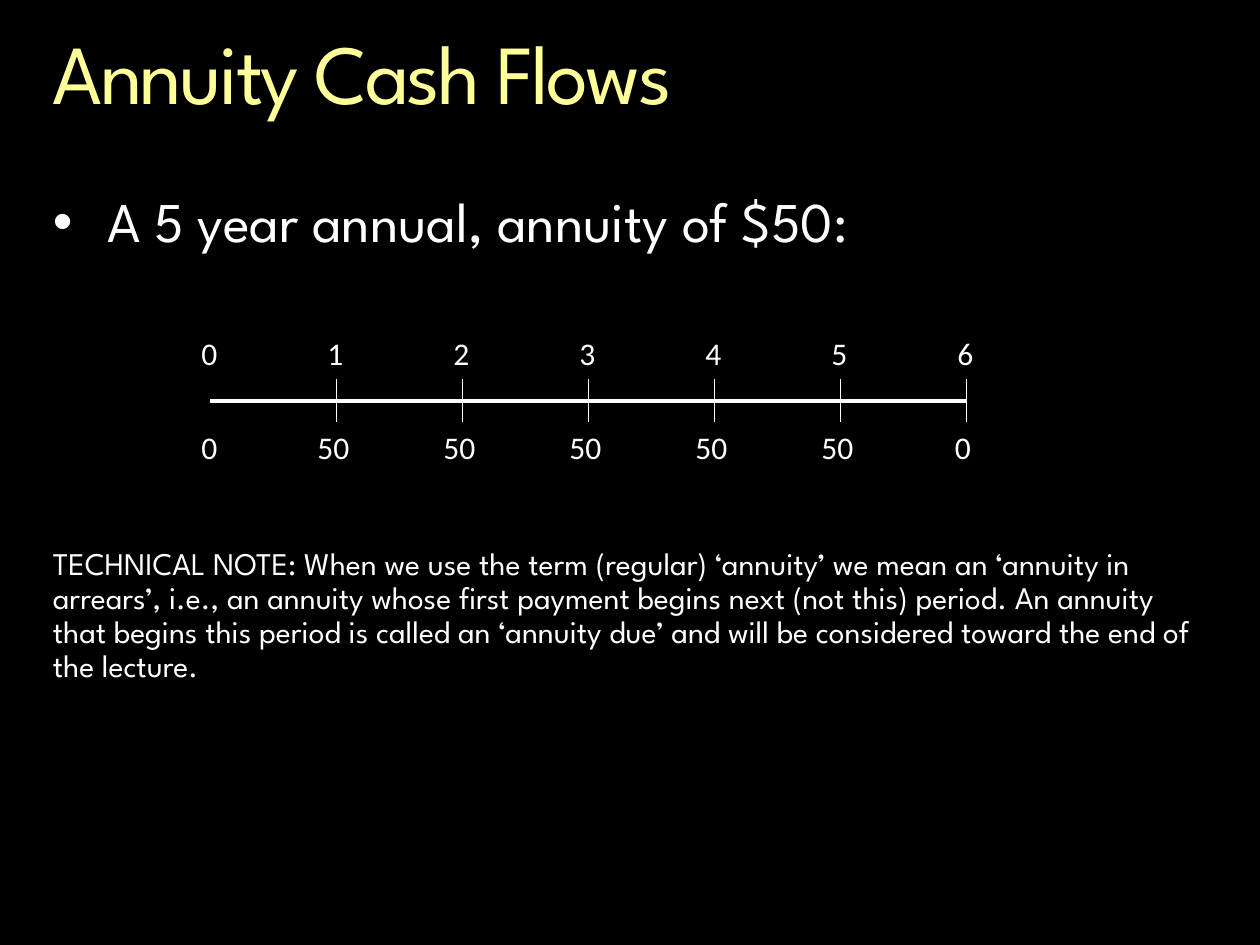
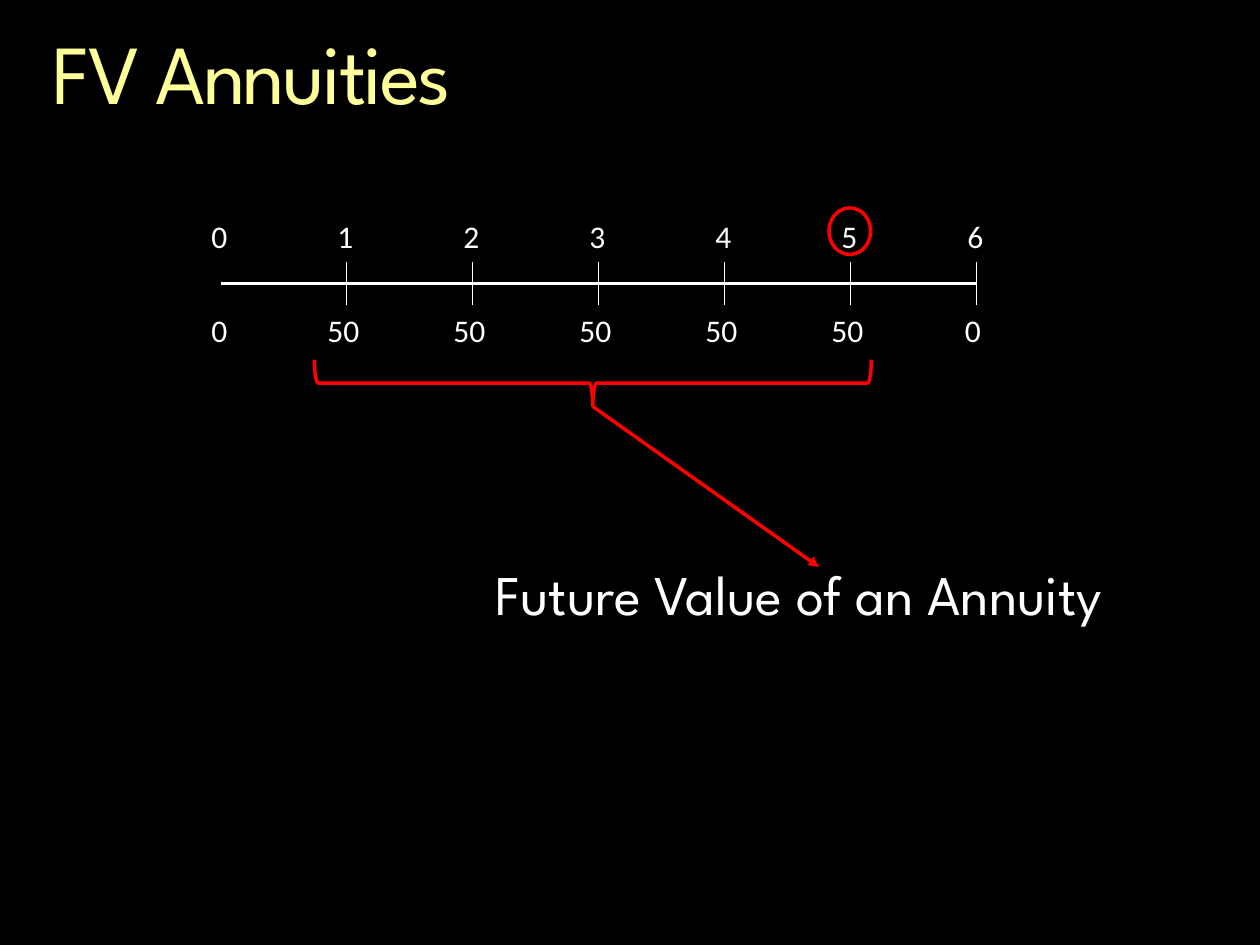
from dataclasses import dataclass
from lxml.etree import SubElement
from pptx import Presentation
from pptx.dml.color import RGBColor as RGB
from pptx.enum.shapes import MSO_CONNECTOR as CONN, MSO_SHAPE as SHAPE
from pptx.enum.text import MSO_AUTO_SIZE as FIT
from pptx.oxml.ns import qn
from pptx.util import Inches, Pt


@dataclass(frozen=True)
class Theme:
    back: RGB = RGB(0x00, 0x00, 0x00)
    title: RGB = RGB(0xFF, 0xFF, 0x99)
    text: RGB = RGB(0xFF, 0xFF, 0xFF)
    mark: RGB = RGB(0xFF, 0x00, 0x00)
    head_font: str = "League Spartan"
    num_font: str = "Calibri"
    title_pt: int = 48
    body_pt: int = 32
    small_pt: int = 18
    axis_pt: float = 2.25
    tick_pt: float = 1
    mark_pt: float = 2


T = Theme()
TITLES = ["Annuity Cash Flows", "FV Annuities"]
BULLET = "A 5 year annual, annuity of $50:"
NOTE = (
    "TECHNICAL NOTE: When we use the term (regular) ‘annuity’ we mean an "
    "‘annuity in arrears’, i.e., an annuity whose first payment begins next "
    "(not this) period. An annuity that begins this period is called an "
    "‘annuity due’ and will be considered toward the end of the lecture."
)
RESULT = "Future Value of an Annuity"
CASH_FLOWS = [("0", 0.17)] + [("50", 0.25)] * 5 + [("0", 0.19)]
LAST = len(CASH_FLOWS) - 1
MARGIN, WIDTH = 0.42, 9.17
TICK = 0.17


def add_run(p, text, size, font=T.head_font, color=T.text):
    r = p.add_run()
    r.text = text
    r.font.size = Pt(size)
    r.font.name = font
    r.font.color.rgb = color
    return r


def add_box(shapes, x, y, w, h, inset=True):
    tf = shapes.add_textbox(Inches(x), Inches(y), Inches(w), Inches(h)).text_frame
    tf.word_wrap = True
    tf.auto_size = FIT.SHAPE_TO_FIT_TEXT
    if not inset:
        tf.margin_left = tf.margin_right = tf.margin_top = tf.margin_bottom = 0
        tf.paragraphs[0].line_spacing = 0.9
    return tf


def add_line(shapes, x1, y1, x2, y2, color, width):
    c = shapes.add_connector(
        CONN.STRAIGHT, Inches(x1), Inches(y1), Inches(x2), Inches(y2))
    c.line.color.rgb = color
    c.line.width = Pt(width)
    SubElement(c._element.spPr, qn("a:effectLst"))
    return c


def add_outline(shapes, kind, x, y, w, h):
    sp = shapes.add_shape(kind, Inches(x), Inches(y), Inches(w), Inches(h))
    sp.shadow.inherit = False
    sp.fill.background()
    sp.line.color.rgb = T.mark
    sp.line.width = Pt(T.mark_pt)
    return sp


def add_slide(prs, title):
    s = prs.slides.add_slide(prs.slide_layouts[6])
    s.background.fill.solid()
    s.background.fill.fore_color.rgb = T.back
    tf = add_box(s.shapes, MARGIN, 0.25, WIDTH, 0.73, inset=False)
    r = add_run(tf.paragraphs[0], title, T.title_pt, color=T.title)
    r.font._element.set("spc", "-150")
    return s


def add_timeline(s, left, y):
    shapes = s.shapes.add_group_shape().shapes
    add_line(shapes, left, y, left + LAST, y, T.text, T.axis_pt)
    for period, (flow, shift) in enumerate(CASH_FLOWS):
        x = left + period
        if period:
            add_line(shapes, x, y - TICK, x, y + TICK, T.text, T.tick_pt)
        tf = add_box(shapes, x - 0.17, y - 0.58, 0.33, 0.4)
        add_run(tf.paragraphs[0], str(period), T.small_pt, T.num_font)
        tf = add_box(shapes, x - shift, y + TICK, 0.58, 0.4)
        add_run(tf.paragraphs[0], flow, T.small_pt, T.num_font)


def build_cash_flows(prs):
    s = add_slide(prs, TITLES[0])
    tf = add_box(s.shapes, MARGIN, 1.54, WIDTH, 4.01, inset=False)
    p = tf.paragraphs[0]
    pPr = p._p.get_or_add_pPr()
    indent = Inches(0.43)
    pPr.set("marL", str(indent))
    pPr.set("indent", str(-indent))
    SubElement(pPr, qn("a:buFont"), typeface="Arial")
    SubElement(pPr, qn("a:buChar"), char="•")
    add_run(p, BULLET, T.body_pt)
    p = tf.add_paragraph()
    p.line_spacing = 0.9
    p.space_before = Pt(168)
    add_run(p, NOTE, T.small_pt)
    add_timeline(s, 1.67, 3.18)


def build_future_value(prs):
    s = add_slide(prs, TITLES[1])
    left, y = 1.75, 2.25
    add_timeline(s, left, y)
    tf = add_box(s.shapes, 3.93, 4.5, 6, 0.48, inset=False)
    add_run(tf.paragraphs[0], RESULT, T.body_pt)
    brace = add_outline(s.shapes, SHAPE.LEFT_BRACE, 4.52, 0.83, 0.37, 4.42)
    brace.rotation = 270
    arrow = add_line(s.shapes, 4.71, 3.23, 6.5, 4.5, T.mark, T.mark_pt)
    SubElement(arrow.line._get_or_add_ln(), qn("a:tailEnd"), type="triangle")
    add_outline(s.shapes, SHAPE.OVAL, left + 5 - 0.17, y - 0.6, 0.33, 0.37)


def main():
    prs = Presentation()
    prs.slide_width, prs.slide_height = Inches(10), Inches(7.5)
    build_cash_flows(prs)
    build_future_value(prs)
    prs.save("out.pptx")


if __name__ == "__main__":
    main()
